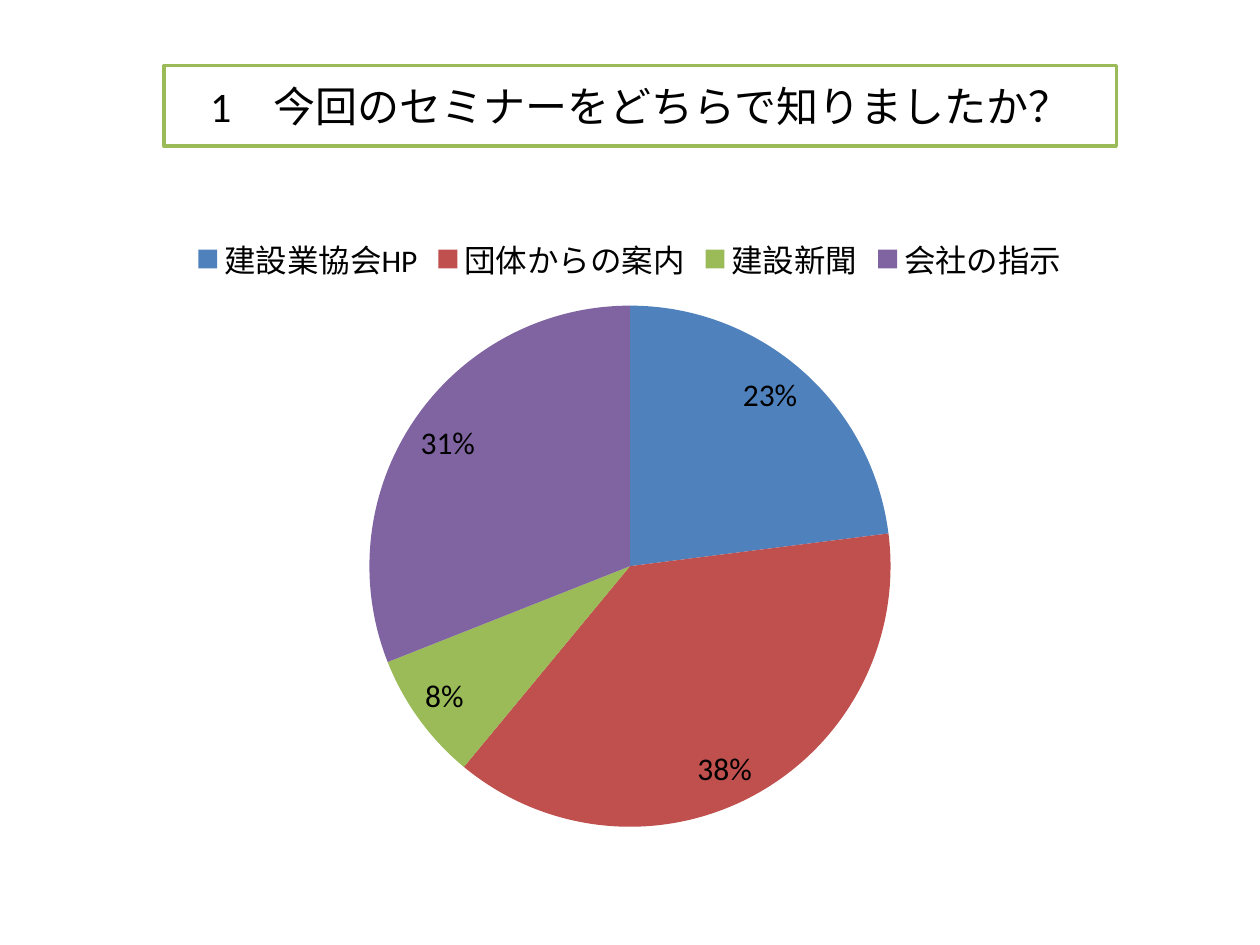
from dataclasses import dataclass

from pptx import Presentation
from pptx import util as u
from pptx.chart.data import CategoryChartData
from pptx.dml.color import RGBColor
from pptx.enum import chart as charts
from pptx.enum import text


@dataclass(frozen=True)
class Theme:
    font: str = "Calibri"
    ink: str = "000000"
    paper: str = "FFFFFF"
    accent: str = "9BBB59"
    slices: tuple = ("4F81BD", "C0504D", "9BBB59", "8064A2")
    title_size: int = 24
    chart_size: int = 18
    border: int = 2


def apply(target, values):
    for name, value in values.items():
        setattr(target, name, value)


def inches(*lengths):
    return [u.Inches(length) for length in lengths]


class SlideBuilder:
    def __init__(self, slide, theme):
        self.slide = slide
        self.theme = theme

    def style_font(self, font, size):
        apply(font, {"name": self.theme.font, "size": u.Pt(size), "bold": False})
        font.color.rgb = RGBColor.from_string(self.theme.ink)

    def fill(self, target, color):
        target.fill.solid()
        target.fill.fore_color.rgb = RGBColor.from_string(color)

    def title(self, wording, box):
        shape = self.slide.shapes.title
        apply(shape, dict(zip(("left", "top", "width", "height"), inches(*box))))
        self.fill(shape, self.theme.paper)
        shape.line.color.rgb = RGBColor.from_string(self.theme.accent)
        shape.line.width = u.Pt(self.theme.border)
        frame = shape.text_frame
        frame.text = wording
        apply(frame, {
            "word_wrap": True,
            "auto_size": text.MSO_AUTO_SIZE.NONE,
            "vertical_anchor": text.MSO_ANCHOR.MIDDLE,
        })
        paragraph = frame.paragraphs[0]
        paragraph.alignment = text.PP_ALIGN.CENTER
        self.style_font(paragraph.runs[0].font, self.theme.title_size)

    def pie(self, answers, box):
        data = CategoryChartData()
        data.categories = list(answers)
        data.add_series("Series 1", list(answers.values()))
        chart = self.slide.shapes.add_chart(
            charts.XL_CHART_TYPE.PIE, *inches(*box), data
        ).chart
        apply(chart, {"has_title": False, "has_legend": True})
        self.style_font(chart.font, self.theme.chart_size)
        apply(chart.legend, {
            "position": charts.XL_LEGEND_POSITION.TOP,
            "include_in_layout": False,
        })
        plot = chart.plots[0]
        apply(plot, {"vary_by_categories": True, "has_data_labels": True})
        apply(plot.data_labels, {
            "show_percentage": True,
            "show_value": False,
            "number_format": "0%",
            "number_format_is_linked": False,
            "position": charts.XL_LABEL_POSITION.INSIDE_END,
        })
        for index, color in enumerate(self.theme.slices):
            self.fill(plot.series[0].points[index].format, color)


def main():
    presentation = Presentation()
    apply(presentation, {"slide_width": u.Inches(10), "slide_height": u.Inches(7.5)})
    slide = presentation.slides.add_slide(presentation.slide_layouts[5])
    builder = SlideBuilder(slide, Theme())
    builder.title("1　今回のセミナーをどちらで知りましたか？", (1.3, 0.52, 7.56, 0.64))
    answers = {"建設業協会HP": 23, "団体からの案内": 38, "建設新聞": 8, "会社の指示": 31}
    builder.pie(answers, (0.5, 1.75, 9, 4.95))
    presentation.save("out.pptx")


if __name__ == "__main__":
    main()
